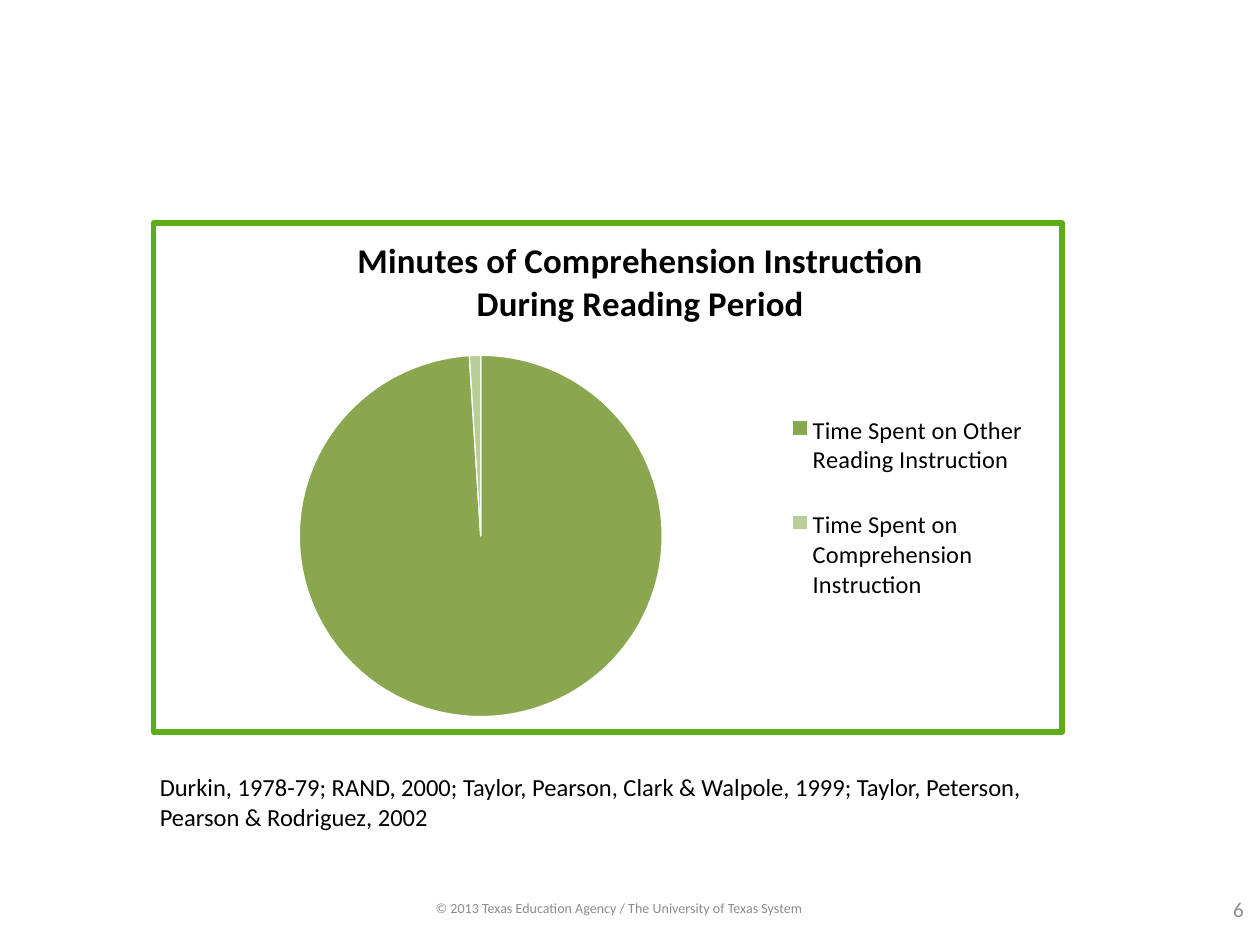
import pptx
import pptx.chart.data
import pptx.dml.color
import pptx.enum.chart
import pptx.enum.text
import pptx.oxml
import pptx.oxml.ns
import pptx.util
from pptx.util import Inches

COLORS = {
    "text": "000000",
    "footer": "8C8C8C",
    "border": "5EAD16",
    "other": "8AA64F",
    "comprehension": "B9CD96",
    "white": "FFFFFF",
}
FONT = "Calibri"


def rgb(name):
    return pptx.dml.color.RGBColor.from_string(COLORS[name])


def style_font(font, size, color="text", bold=False):
    font.name = FONT
    font.size = pptx.util.Pt(size)
    font.bold = bold
    font.color.rgb = rgb(color)


def add_text(slide, box, text, size, color="text", centered=False):
    shape = slide.shapes.add_textbox(*map(Inches, box))
    frame = shape.text_frame
    frame.word_wrap = True
    paragraph = frame.paragraphs[0]
    if centered:
        frame.vertical_anchor = pptx.enum.text.MSO_ANCHOR.MIDDLE
        paragraph.alignment = pptx.enum.text.PP_ALIGN.CENTER
    run = paragraph.add_run()
    run.text = text
    style_font(run.font, size, color)


def set_layout(element, inner=False, **fractions):
    """Place a chart part by fractions (x, y, w, h) of the chart area."""
    qn = pptx.oxml.ns.qn
    for layout in element.findall(qn("c:layout")):
        element.remove(layout)
    target = '<c:layoutTarget val="inner"/>' if inner else ""
    modes = "".join(f'<c:{key}Mode val="edge"/>' for key in "xy")
    sizes = "".join(f'<c:{key} val="{value}"/>' for key, value in fractions.items())
    layout = pptx.oxml.parse_xml(
        f'<c:layout {pptx.oxml.ns.nsdecls("c")}><c:manualLayout>'
        f"{target}{modes}{sizes}</c:manualLayout></c:layout>"
    )
    overlay = element.find(qn("c:overlay"))
    if overlay is None:
        element.insert(0, layout)
    else:
        overlay.addprevious(layout)


def add_chart_border(chart):
    chart_space = chart.element
    border = pptx.oxml.parse_xml(
        f'<c:spPr {pptx.oxml.ns.nsdecls("c", "a")}><a:noFill/>'
        f'<a:ln w="{pptx.util.Pt(3)}"><a:solidFill><a:srgbClr val="{COLORS["border"]}"/>'
        "</a:solidFill><a:round/></a:ln></c:spPr>"
    )
    chart_space.find(pptx.oxml.ns.qn("c:chart")).addnext(border)


def add_chart_title(chart, lines):
    chart.has_title = True
    frame = chart.chart_title.text_frame
    for index, line in enumerate(lines):
        paragraph = frame.add_paragraph() if index else frame.paragraphs[0]
        paragraph.alignment = pptx.enum.text.PP_ALIGN.CENTER
        run = paragraph.add_run()
        run.text = line
        style_font(run.font, 20, bold=True)
    chart.chart_title.include_in_layout = False
    title = chart.element.find(".//" + pptx.oxml.ns.qn("c:title"))
    set_layout(title, x=0.22, y=0.02)


def add_pie(slide, box):
    data = pptx.chart.data.CategoryChartData()
    data.categories = [
        "Time Spent on Other Reading Instruction",
        "Time Spent on Comprehension Instruction",
    ]
    data.add_series("Series 1", (99, 1))
    chart = slide.shapes.add_chart(
        pptx.enum.chart.XL_CHART_TYPE.PIE, *map(Inches, box), data
    ).chart
    style_font(chart.font, 10)
    add_chart_title(
        chart, ["Minutes of Comprehension Instruction", "During Reading Period"]
    )

    chart.has_legend = True
    chart.legend.position = pptx.enum.chart.XL_LEGEND_POSITION.RIGHT
    chart.legend.include_in_layout = False
    style_font(chart.legend.font, 14)
    legend = chart.element.find(".//" + pptx.oxml.ns.qn("c:legend"))
    set_layout(legend, x=0.69, y=0.31, w=0.28, h=0.5)

    plot_area = chart.element.find(".//" + pptx.oxml.ns.qn("c:plotArea"))
    set_layout(plot_area, inner=True, x=0.16, y=0.26, w=0.4, h=0.71)
    chart.plots[0].vary_by_categories = True
    for index, color in enumerate(("other", "comprehension")):
        point_format = chart.plots[0].series[0].points[index].format
        point_format.fill.solid()
        point_format.fill.fore_color.rgb = rgb(color)
        point_format.line.color.rgb = rgb("white")
        point_format.line.width = pptx.util.Pt(0.75)
    add_chart_border(chart)


def main():
    presentation = pptx.Presentation()
    presentation.slide_width = Inches(10)
    presentation.slide_height = Inches(7.5)
    slide = presentation.slides.add_slide(presentation.slide_layouts[6])

    add_text(
        slide,
        (1.17, 6.08, 7.67, 0.57),
        "Durkin, 1978-79; RAND, 2000; Taylor, Pearson, Clark & Walpole, 1999; "
        "Taylor, Peterson, Pearson & Rodriguez, 2002",
        14,
    )
    add_pie(slide, (1.2, 1.75, 7.25, 4.08))
    add_text(
        slide,
        (2.08, 7.08, 5.67, 0.25),
        "© 2013 Texas Education Agency / The University of Texas System",
        8,
        "footer",
        centered=True,
    )
    add_text(slide, (9.58, 7.08, 0.5, 0.27), "6", 12, "footer", centered=True)
    presentation.save("out.pptx")


if __name__ == "__main__":
    main()
